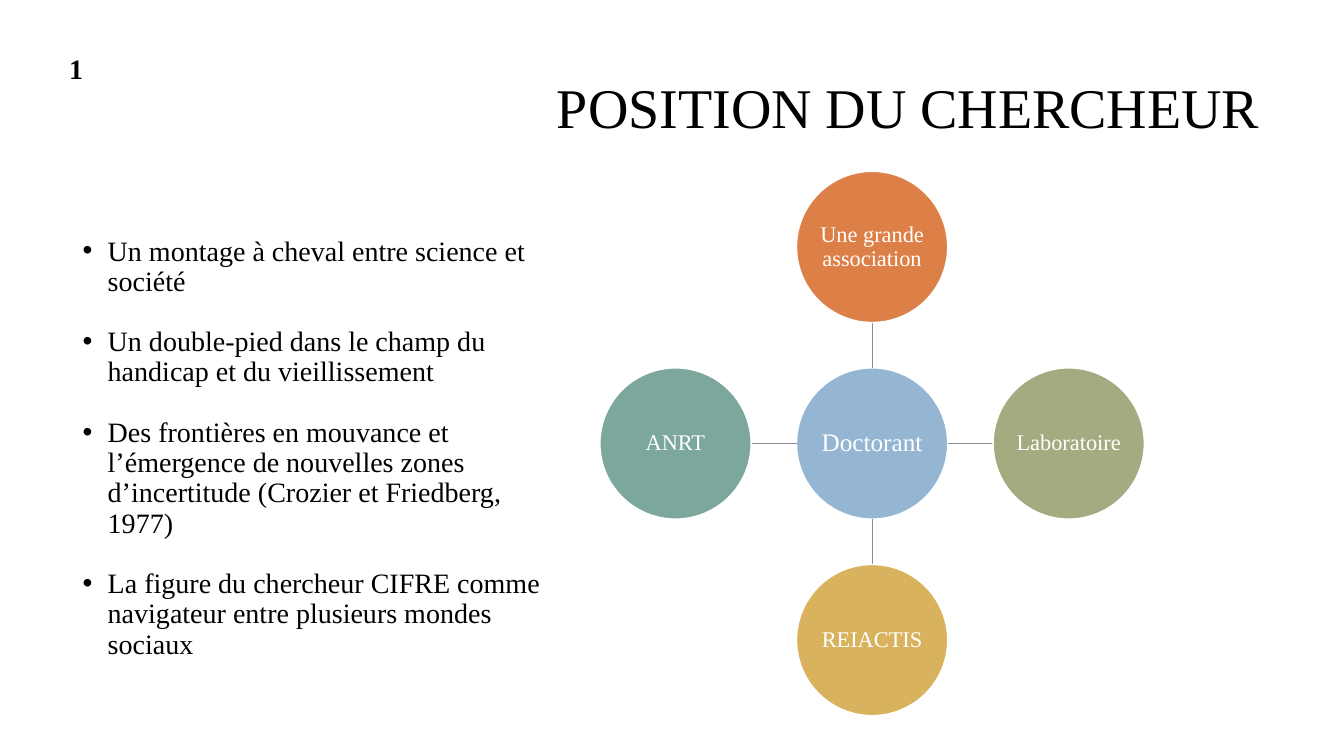
import pptx
import pptx.util
import pptx.dml.color
import pptx.enum.shapes
import pptx.enum.text
import pptx.oxml.ns
from lxml import etree

Inches, Pt = pptx.util.Inches, pptx.util.Pt
ALIGN, ANCHOR = pptx.enum.text.PP_ALIGN, pptx.enum.text.MSO_ANCHOR

# Content
FONT = "Times New Roman"
TITLE = "POSITION DU CHERCHEUR"
NUMBER = "1"
BULLETS = [
    "Un montage à cheval entre science et société",
    "Un double-pied dans le champ du handicap et du vieillissement",
    "Des frontières en mouvance et l’émergence de nouvelles zones d’incertitude "
    "(Crozier et Friedberg, 1977)",
    "La figure du chercheur CIFRE comme navigateur entre plusieurs mondes sociaux",
]
HUB = ("Doctorant", "94B6D2")
PARTNERS = [  # name, fill, direction from the hub
    ("Une grande association", "DD8047", (0, -1)),
    ("Laboratoire", "A5AB81", (1, 0)),
    ("REIACTIS", "D8B25C", (0, 1)),
    ("ANRT", "7BA79D", (-1, 0)),
]

# Diagram geometry, in inches
HUB_X, HUB_Y = 8.65, 4.4
DIAMETER, SPACING = 1.5, 1.95
RADIUS = DIAMETER / 2


def color(value):
    return pptx.dml.color.RGBColor.from_string(value)


def add_run(p, text, size, ink="000000", bold=False):
    r = p.add_run()
    r.text = text
    r.font.name, r.font.size, r.font.bold = FONT, Pt(size), bold
    r.font.color.rgb = color(ink)


def add_text(s, x, y, w, h, anchor):
    tf = s.shapes.add_textbox(Inches(x), Inches(y), Inches(w), Inches(h)).text_frame
    tf.word_wrap, tf.vertical_anchor = True, anchor
    return tf


def add_bullet(p):
    pPr = p._p.get_or_add_pPr()
    pPr.set("marL", str(Inches(0.25)))
    pPr.set("indent", str(-Inches(0.25)))
    etree.SubElement(pPr, pptx.oxml.ns.qn("a:buFont")).set("typeface", "Arial")
    etree.SubElement(pPr, pptx.oxml.ns.qn("a:buChar")).set("char", "•")


def add_circle(s, x, y, w, h, fill, text, size, ink="FFFFFF", bold=False, inset=0.01):
    sp = s.shapes.add_shape(pptx.enum.shapes.MSO_SHAPE.OVAL,
                            Inches(x), Inches(y), Inches(w), Inches(h))
    sp.shadow.inherit = False
    sp.fill.solid()
    sp.fill.fore_color.rgb = color(fill)
    sp.line.color.rgb = color("FFFFFF")
    sp.line.width = Pt(1)
    tf = sp.text_frame
    tf.word_wrap, tf.vertical_anchor = True, ANCHOR.MIDDLE
    tf.margin_left = tf.margin_right = tf.margin_top = tf.margin_bottom = Inches(inset)
    p = tf.paragraphs[0]
    p.alignment, p.line_spacing = ALIGN.CENTER, 0.9
    add_run(p, text, size, ink, bold)


def add_node(s, cx, cy, fill, text, size):
    add_circle(s, cx - RADIUS, cy - RADIUS, DIAMETER, DIAMETER, fill, text, size)


def add_link(s, dx, dy):
    near, far = RADIUS, SPACING - RADIUS
    line = s.shapes.add_connector(
        pptx.enum.shapes.MSO_CONNECTOR.STRAIGHT,
        Inches(HUB_X + dx * near), Inches(HUB_Y + dy * near),
        Inches(HUB_X + dx * far), Inches(HUB_Y + dy * far))
    line.line.color.rgb = color("8C8C8C")
    line.line.width = Pt(0.5)
    etree.SubElement(line._element.spPr, pptx.oxml.ns.qn("a:effectLst"))


def main():
    prs = pptx.Presentation()
    prs.slide_width, prs.slide_height = Inches(13.33), Inches(7.5)
    s = prs.slides.add_slide(prs.slide_layouts[6])

    # Bulleted list
    tf = add_text(s, 0.72, 2.3, 5.05, 4.79, ANCHOR.TOP)
    for i, text in enumerate(BULLETS):
        p = tf.paragraphs[0] if i == 0 else tf.add_paragraph()
        p.line_spacing = 0.9
        if i:
            p.space_before = Pt(21.6)
        add_bullet(p)
        add_run(p, text, 20)

    # Hub and its partners
    add_node(s, HUB_X, HUB_Y, HUB[1], HUB[0], 18)
    for name, fill, (dx, dy) in PARTNERS:
        add_link(s, dx, dy)
        add_node(s, HUB_X + dx * SPACING, HUB_Y + dy * SPACING, fill, name, 16)

    # Slide number and title
    add_circle(s, 0.34, 0.27, 0.83, 0.86, "FFFFFF", NUMBER, 20, "000000", True, 0.05)
    p = add_text(s, 3.17, 0.39, 9.42, 1.41, ANCHOR.MIDDLE).paragraphs[0]
    p.alignment, p.line_spacing = ALIGN.RIGHT, 0.9
    add_run(p, TITLE, 40)

    prs.save("out.pptx")


if __name__ == "__main__":
    main()
